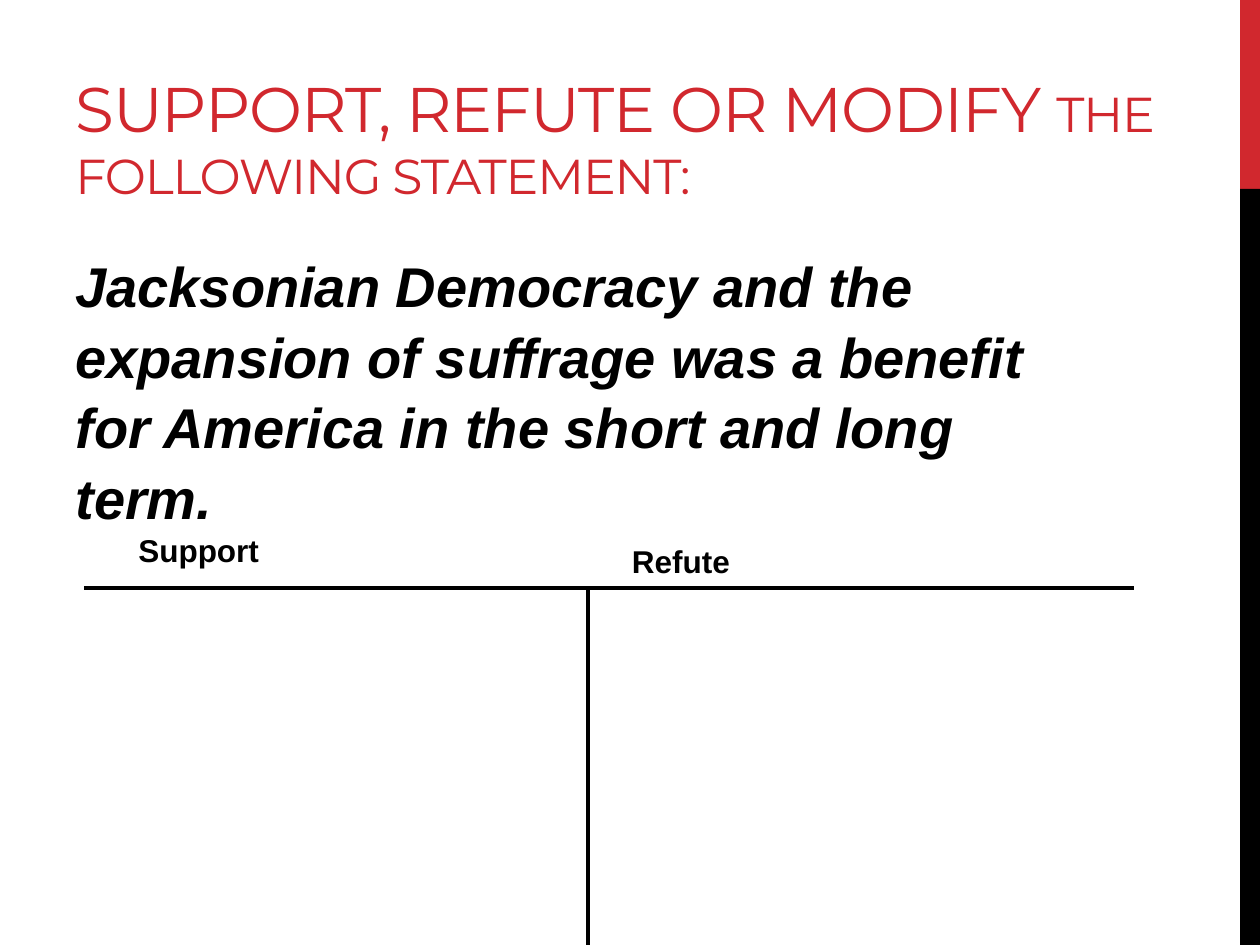
"""Build a slide with a debate statement above a T-chart for two sides."""
from lxml.etree import SubElement
from pptx import Presentation
from pptx.dml.color import RGBColor
from pptx.enum.shapes import MSO_CONNECTOR, MSO_SHAPE
from pptx.enum.text import MSO_ANCHOR
from pptx.oxml.ns import qn
from pptx.util import Cm, Pt

COLORS = {"red": "D1282E", "black": "000000"}
WIDTH, HEIGHT = 25.4, 19.05
BAR_LEFT, BAR_SPLIT = 25, 3.81
CHART_LEFT, CHART_RIGHT = 1.7, 22.86
CHART_TOP, CHART_MID = 11.85, 11.85


def color(name):
    """Return the named colour."""
    return RGBColor.from_string(COLORS[name])


def add_bar(slide, top, height, fill):
    """Add a plain block to the right edge."""
    bar = slide.shapes.add_shape(
        MSO_SHAPE.RECTANGLE, Cm(BAR_LEFT), Cm(top), Cm(WIDTH - BAR_LEFT), Cm(height))
    bar.shadow.inherit = False
    bar.fill.solid()
    bar.fill.fore_color.rgb = color(fill)
    bar.line.fill.background()


def add_line(slide, left, top, right, bottom):
    """Add a black rule of the T-chart."""
    line = slide.shapes.add_connector(
        MSO_CONNECTOR.STRAIGHT, Cm(left), Cm(top), Cm(right), Cm(bottom))
    line.line.color.rgb = color("black")
    line.line.width = Pt(2.25)
    SubElement(line._element.spPr, qn("a:effectLst"))


def add_text(slide, box, text):
    """Add a wrapped text box and return its frame."""
    frame = slide.shapes.add_textbox(*map(Cm, box)).text_frame
    frame.word_wrap = True
    frame.text = text
    return frame


def style(run, size, font="Arial", hue="black", bold=True, slant=False):
    """Set the look of a run."""
    run.font.name = font
    run.font.size = Pt(size)
    run.font.color.rgb = color(hue)
    run.font.bold = bold
    run.font.italic = slant


def add_title(slide):
    """Add the two-size heading."""
    frame = add_text(slide, (1.27, 0.43, 22.43, 3.81), "SUPPORT, REFUTE OR MODIFY ")
    frame.vertical_anchor = MSO_ANCHOR.BOTTOM
    line = frame.paragraphs[0]
    line.add_run().text = "THE FOLLOWING STATEMENT:"
    for run, size in zip(line.runs, (36, 28)):
        style(run, size, "Montserrat", "red", bold=False)
        run.font._element.set("spc", "-60")


def add_claim(slide):
    """Add the statement to debate."""
    frame = add_text(
        slide, (1.27, 4.88, 21.16, 5.72),
        "Jacksonian Democracy and the expansion of suffrage was a benefit "
        "for America in the short and long term.")
    line = frame.paragraphs[0]
    line.line_spacing = 1.05
    line.space_after = Pt(6)
    style(line.runs[0], 32, slant=True)


def add_label(slide, box, text):
    """Add the heading of one side."""
    frame = add_text(slide, box, text)
    style(frame.paragraphs[0].runs[0], 18)


def main():
    """Build and save the slide."""
    deck = Presentation()
    deck.slide_width, deck.slide_height = Cm(WIDTH), Cm(HEIGHT)
    slide = deck.slides.add_slide(deck.slide_layouts[6])
    add_bar(slide, 0, BAR_SPLIT, "red")
    add_bar(slide, BAR_SPLIT, HEIGHT - BAR_SPLIT, "black")
    add_title(slide)
    add_claim(slide)
    add_line(slide, CHART_LEFT, CHART_TOP, CHART_RIGHT, CHART_TOP)
    add_line(slide, CHART_MID, CHART_TOP, CHART_MID, HEIGHT)
    add_label(slide, (2.54, 10.58, 6.15, 1.02), "Support")
    add_label(slide, (12.49, 10.8, 8.69, 1.07), "Refute")
    deck.save("out.pptx")


if __name__ == "__main__":
    main()
